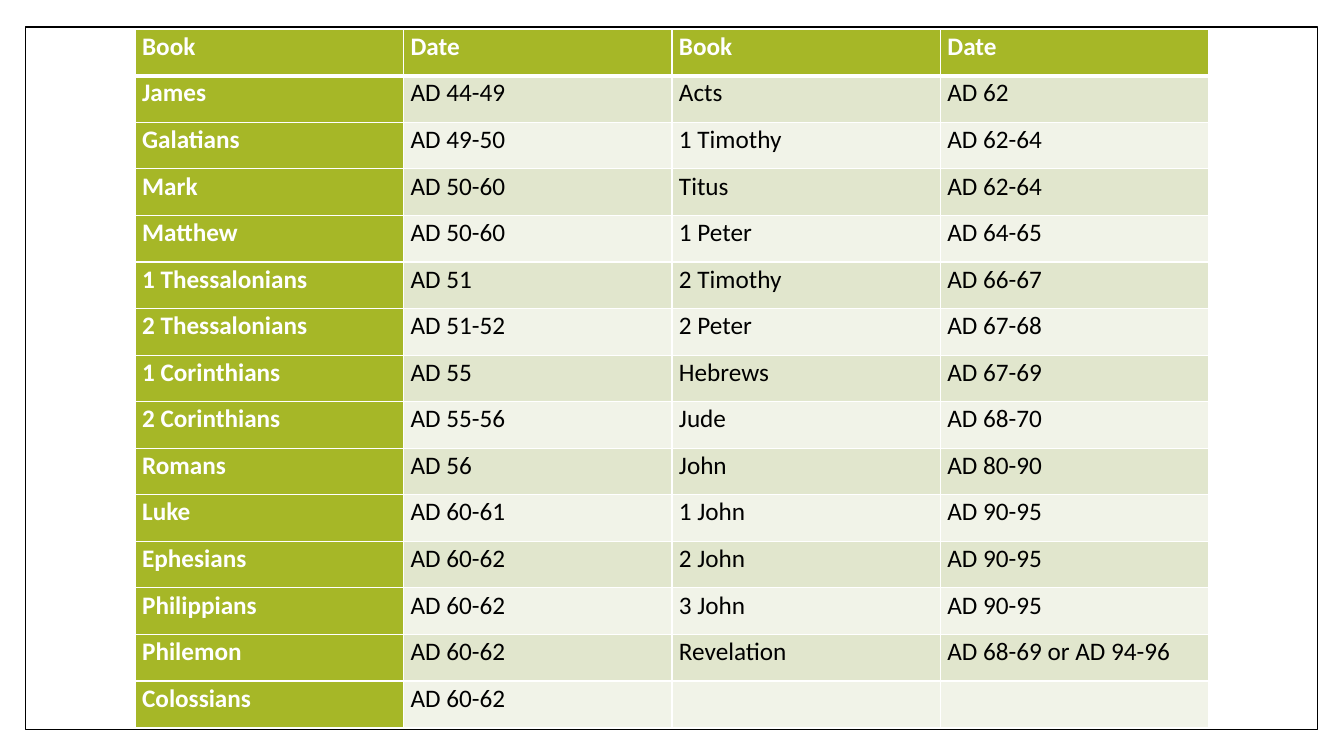
from lxml.etree import SubElement
from pptx import Presentation
from pptx.dml.color import RGBColor
from pptx.enum.shapes import MSO_SHAPE
from pptx.oxml.ns import qn
from pptx.util import Inches, Pt

COLORS = {
    "white": "FFFFFF",
    "black": "000000",
    "green": "A6B727",
    "band_dark": "E1E6CD",
    "band_light": "F1F3E8",
}

ROWS = [
    ("Book", "Date", "Book", "Date"),
    ("James", "AD 44-49", "Acts", "AD 62"),
    ("Galatians", "AD 49-50", "1 Timothy", "AD 62-64"),
    ("Mark", "AD 50-60", "Titus", "AD 62-64"),
    ("Matthew", "AD 50-60", "1 Peter", "AD 64-65"),
    ("1 Thessalonians", "AD 51", "2 Timothy", "AD 66-67"),
    ("2 Thessalonians", "AD 51-52", "2 Peter", "AD 67-68"),
    ("1 Corinthians", "AD 55", "Hebrews", "AD 67-69"),
    ("2 Corinthians", "AD 55-56", "Jude", "AD 68-70"),
    ("Romans", "AD 56", "John", "AD 80-90"),
    ("Luke", "AD 60-61", "1 John", "AD 90-95"),
    ("Ephesians", "AD 60-62", "2 John", "AD 90-95"),
    ("Philippians", "AD 60-62", "3 John", "AD 90-95"),
    ("Philemon", "AD 60-62", "Revelation", "AD 68-69 or AD 94-96"),
    ("Colossians", "AD 60-62", "", ""),
]


def rgb(name):
    return RGBColor.from_string(COLORS[name])


def add_text(tf, text, size=18, color="black", bold=False, font="Calibri", spacing=1.07):
    p = tf.paragraphs[0]
    p.line_spacing = spacing
    if not text:
        return
    r = p.add_run()
    r.text = text
    r.font.name = font
    r.font.size = Pt(size)
    r.font.bold = bold
    r.font.color.rgb = rgb(color)


def add_border(cell, side, width):
    ln = SubElement(cell._tc.get_or_add_tcPr(), qn(f"a:ln{side}"), w=str(Pt(width)))
    fill = SubElement(ln, qn("a:solidFill"))
    SubElement(fill, qn("a:srgbClr"), val=COLORS["white"])


def format_cell(cell, text, row, col):
    cell.margin_left = cell.margin_right = Inches(0.07)
    cell.margin_top = cell.margin_bottom = 0
    thick_side = {0: "B", 1: "T"}.get(row)
    for side in "LRTB":
        add_border(cell, side, 3 if side == thick_side else 1)
    heading = row == 0 or col == 0
    band = "band_dark" if row % 2 else "band_light"
    cell.fill.solid()
    cell.fill.fore_color.rgb = rgb("green" if heading else band)
    add_text(cell.text_frame, text, color="white" if heading else "black", bold=heading)


def add_frame(s, left, top, width, height):
    sp = s.shapes.add_shape(
        MSO_SHAPE.RECTANGLE, Inches(left), Inches(top), Inches(width), Inches(height)
    )
    sp.shadow.inherit = False
    sp.fill.solid()
    sp.fill.fore_color.rgb = rgb("white")
    sp.line.color.rgb = rgb("black")
    sp.line.width = Pt(1)


def add_book_table(s, left, top, width, height):
    table = s.shapes.add_table(
        len(ROWS), len(ROWS[0]), Inches(left), Inches(top), Inches(width), Inches(height)
    ).table
    table.first_col = True
    for row, texts in enumerate(ROWS):
        for col, text in enumerate(texts):
            format_cell(table.cell(row, col), text, row, col)


def main():
    prs = Presentation()
    prs.slide_width = Inches(13.33)
    prs.slide_height = Inches(7.5)
    s = prs.slides.add_slide(prs.slide_layouts[6])
    add_frame(s, 0.25, 0.27, 12.82, 6.97)
    add_book_table(s, 1.34, 0.29, 10.65, 6.93)
    prs.save("out.pptx")


if __name__ == "__main__":
    main()
